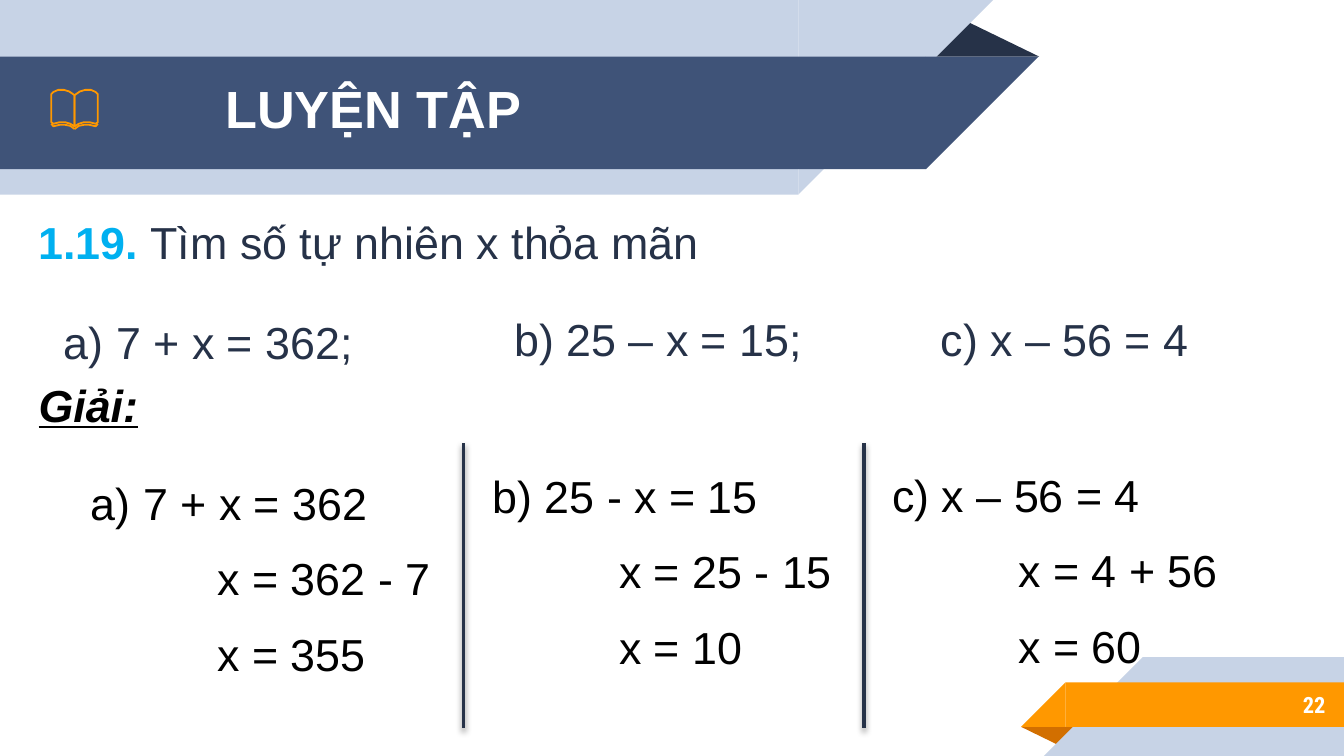
from dataclasses import dataclass

from lxml import etree
from pptx import Presentation
from pptx import util as u
from pptx.dml.color import RGBColor
from pptx.enum import shapes, text
from pptx.oxml import ns

Cm = u.Cm
KIND = shapes.MSO_SHAPE
ALIGN = text.PP_ALIGN


@dataclass(frozen=True)
class Theme:
    navy: str = "263248"
    blue: str = "3F5378"
    pale: str = "C7D3E6"
    orange: str = "FF9800"
    rust: str = "D26F00"
    sky: str = "00B0F0"
    white: str = "FFFFFF"
    black: str = "000000"
    font: str = "Arial"
    number_font: str = "Roboto Condensed"
    title: int = 28
    body: int = 24
    number: int = 12


THEME = Theme()


def rgb(color):
    return RGBColor.from_string(color)


def add_block(slide, kind, box, color, flip=None, rotation=0):
    shape = slide.shapes.add_shape(kind, *map(Cm, box))
    shape.shadow.inherit = False
    shape.fill.solid()
    shape.fill.fore_color.rgb = rgb(color)
    shape.line.fill.background()
    shape.rotation = rotation
    if flip:
        shape._element.spPr.find(ns.qn("a:xfrm")).set(flip, "1")
    return shape


def add_fold(slide, box, color, rotation=0):
    add_block(slide, KIND.ISOSCELES_TRIANGLE, box, color,
              rotation=rotation).adjustments[0] = 0.324


def add_text(slide, box, content, size=THEME.body, color=THEME.navy, font=THEME.font,
             align=ALIGN.JUSTIFY, spacing=None, wrap=True, bold=False):
    shape = slide.shapes.add_textbox(*map(Cm, box))
    frame = shape.text_frame
    frame.word_wrap = wrap
    frame.auto_size = text.MSO_AUTO_SIZE.SHAPE_TO_FIT_TEXT
    paragraph = frame.paragraphs[0]
    paragraph.add_run().text = content
    paragraph.alignment = align
    if spacing:
        paragraph.line_spacing = spacing
    paragraph.font.name = font
    paragraph.font.size = u.Pt(size)
    paragraph.font.bold = bold
    paragraph.font.color.rgb = rgb(color)
    return shape


# Header: bands with a slanted right end, book icon and title
def add_header(slide, box):
    left, top, width, height = box
    add_fold(slide, (left + 17.48, top + 0.36, 2.16, 0.71), THEME.navy)
    for offset, length, tall, color in ((0, 15.09, height, THEME.pale),
                                        (1.07, 17.5, 2.13, THEME.blue)):
        add_block(slide, KIND.RECTANGLE, (left, top + offset, length, tall), color)
        add_block(slide, KIND.RIGHT_TRIANGLE,
                  (left + length, top + offset, tall, tall), color, "flipV")
    add_book(slide, (left + 0.97, top + 1.7, 0.88, 0.74))
    add_text(slide, (left + 4.01, top + 1.32, 7.21, 1.45), "LUYỆN TẬP",
             THEME.title, THEME.white, bold=True)


# Book icon: each half is a page and a cover edge, mirrored at the spine
def add_book(slide, box):
    left, top, width, _ = box
    spine = left + width / 2
    cover = ((0.44, 0.64), (0.4, 0.69), (0.28, 0.66), (0.18, 0.66), (0.08, 0.68), (0, 0.74))
    page = ((0, 0.1), (0, 0.69), (0.08, 0.64), (0.18, 0.61), (0.28, 0.61), (0.4, 0.64),
            (0.44, 0.61), (0.44, 0.08), (0.4, 0.04), (0.31, 0), (0.2, 0), (0.1, 0.03))
    for outline, closed in ((cover, False), (page, True)):
        for side in (-1, 1):
            points = [(Cm(spine + side * x), Cm(top + y)) for x, y in outline]
            builder = slide.shapes.build_freeform(*points[0])
            builder.add_line_segments(points[1:], close=closed)
            shape = builder.convert_to_shape()
            shape.shadow.inherit = False
            shape.fill.background()
            shape.line.color.rgb = rgb(THEME.orange)
            shape.line.width = u.Pt(0.96)


# Footer: bands with a slanted left end and the page number
def add_footer(slide, box):
    left, top, width, height = box
    add_fold(slide, (left, top + 1.32, 1.09, 0.36), THEME.rust, 180)
    for start, offset, tall, color in ((0.43, 0, height, THEME.pale),
                                       (0, 0.48, 0.84, THEME.orange)):
        body = start + tall
        add_block(slide, KIND.RECTANGLE,
                  (left + body, top + offset, width - body, tall), color)
        add_block(slide, KIND.RIGHT_TRIANGLE,
                  (left + start, top + offset, tall, tall), color, "flipH")
    number = add_text(slide, (left + 1.86, top + 0.46, 4.14, 0.89), "22", THEME.number,
                      THEME.white, THEME.number_font, ALIGN.RIGHT, bold=True)
    frame = number.text_frame
    frame.auto_size = text.MSO_AUTO_SIZE.NONE
    frame.vertical_anchor = text.MSO_ANCHOR.MIDDLE
    frame.margin_top = frame.margin_bottom = Cm(0.25)


# Exercise: statement and its three equations
def add_exercise(slide, box):
    left, top, width, height = box
    statement = add_text(slide, (left, top, width, 1.6), "1.19. ", color=THEME.sky,
                         spacing=1.5)
    paragraph = statement.text_frame.paragraphs[0]
    paragraph.runs[0].font.bold = True
    task = paragraph.add_run()
    task.text = "Tìm số tự nhiên x thỏa mãn"
    task.font.color.rgb = rgb(THEME.navy)
    for x, y, length, equation, wrap in ((0.48, 1.88, 6.02, "a) 7 + x = 362;", False),
                                         (8.99, 1.83, 6.38, "b) 25 – x = 15;", True),
                                         (17.05, 1.83, 5.23, "c) x – 56 = 4", False)):
        add_text(slide, (left + x, top + y, length, 1.8), equation, spacing=1.5, wrap=wrap)


def add_divider(slide, x, top, bottom):
    line = slide.shapes.add_connector(shapes.MSO_CONNECTOR.STRAIGHT,
                                      Cm(x), Cm(top), Cm(x), Cm(bottom))
    line.line.color.rgb = rgb(THEME.navy)
    line.line.width = u.Pt(2)
    effects = etree.SubElement(line._element.spPr, ns.qn("a:effectLst"))
    shadow = etree.SubElement(effects, ns.qn("a:outerShdw"), blurRad="40000",
                              dist="20000", dir="5400000", rotWithShape="0")
    tint = etree.SubElement(shadow, ns.qn("a:srgbClr"), val=THEME.black)
    etree.SubElement(tint, ns.qn("a:alpha"), val="38000")


# Solution: heading and three columns parted by lines
def add_solution(slide, box):
    left, top, width, height = box
    heading = add_text(slide, (left, top, 2.67, 1.27), "Giải:", color=THEME.black,
                       align=ALIGN.LEFT, bold=True)
    font = heading.text_frame.paragraphs[0].font
    font.italic = font.underline = True
    columns = ((0.99, 1.85, ("a) 7 + x = 362", "x = 362 - 7", "x = 355")),
               (8.58, 1.72, ("b) 25 - x = 15", "x = 25 - 15", "x = 10")),
               (16.13, 1.7, ("c) x – 56 = 4", "x = 4 + 56", "x = 60")))
    indent, step = 2.39, 1.43
    for x, y, lines in columns:
        for row, line in enumerate(lines):
            shift = indent if row else 0
            add_text(slide, (left + x + shift, top + y + row * step, 7.26 - shift, 1.27),
                     line, color=THEME.black)
    for x in (8.28, 15.85):
        add_divider(slide, left + x, top + 1.37, top + height)


def main():
    presentation = Presentation()
    presentation.slide_width, presentation.slide_height = Cm(25.4), Cm(14.29)
    slide = presentation.slides.add_slide(presentation.slide_layouts[6])
    add_header(slide, (0, 0, 18.77, 3.68))
    add_footer(slide, (19.3, 12.42, 6.1, 1.87))
    add_exercise(slide, (0.48, 3.43, 22.73, 3.68))
    add_solution(slide, (0.48, 7.01, 23.4, 6.76))
    presentation.save("out.pptx")


if __name__ == "__main__":
    main()
